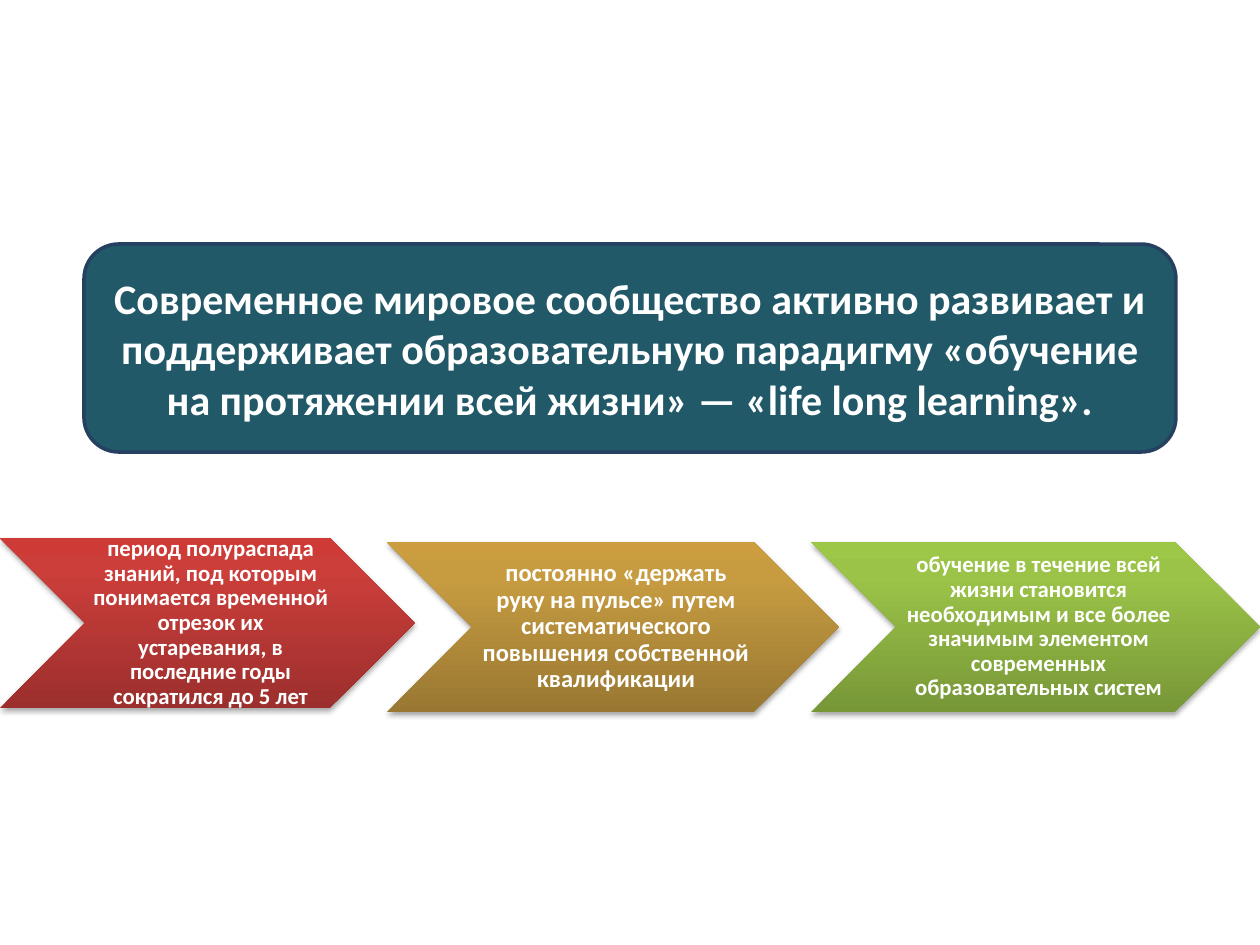
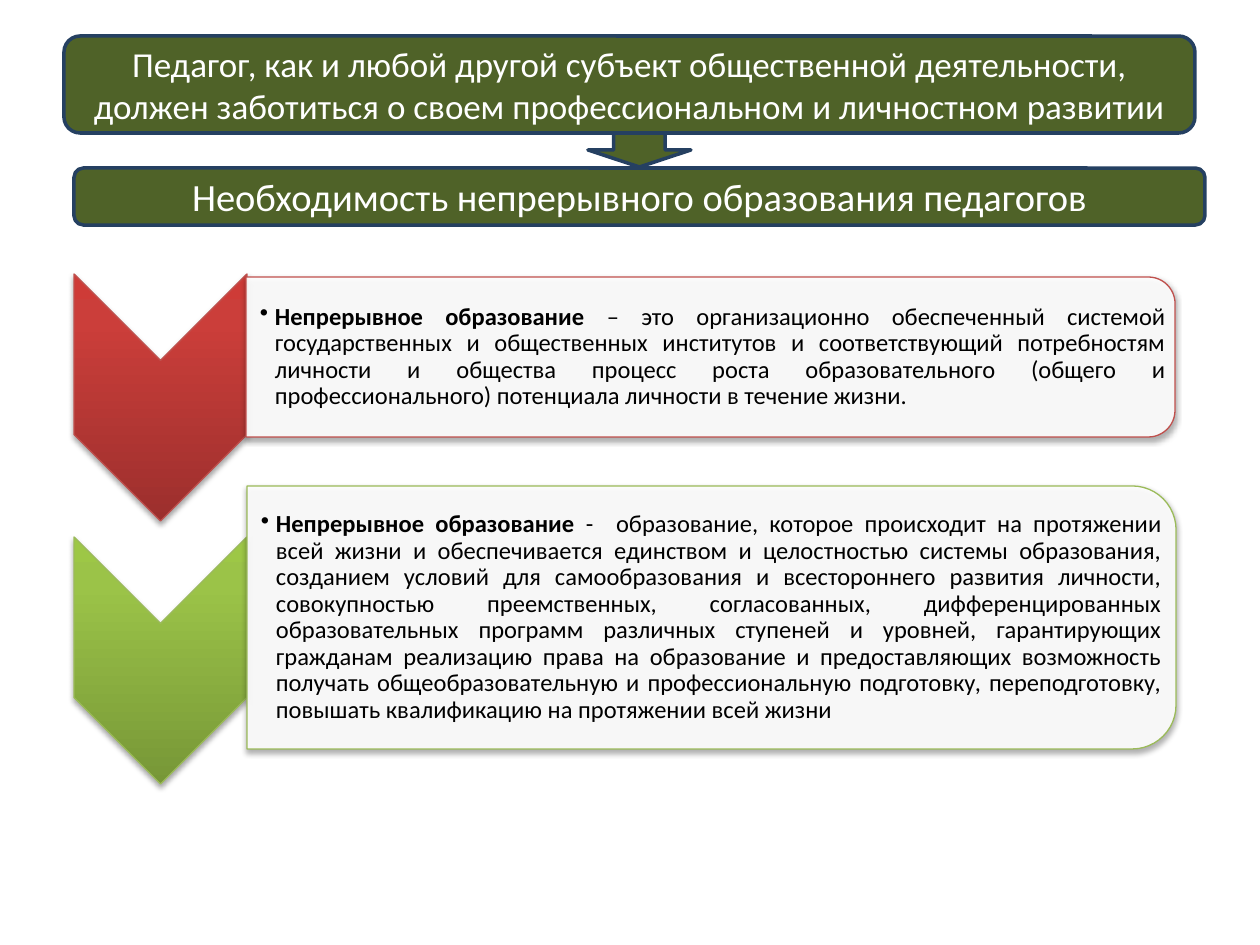
import copy

import pptx
import pptx.dml.color
import pptx.enum.shapes
import pptx.enum.text
import pptx.oxml
import pptx.oxml.ns
import pptx.util

SHAPE = pptx.enum.shapes.MSO_SHAPE
ALIGN = pptx.enum.text.PP_ALIGN
MIDDLE = pptx.enum.text.MSO_ANCHOR.MIDDLE
NAMESPACE = pptx.oxml.ns.nsdecls("a")
qn = pptx.oxml.ns.qn

PIXELS_PER_INCH = 126
FONT = "Calibri"
COLOURS = {
    "white": "FFFFFF",
    "black": "000000",
    "teal": "215968",
    "olive": "4F6228",
    "navy": "254061",
    "red": "C0504D",
    "green": "9BBB59",
}
GRADIENTS = {
    "red": ("9C2F2D", "CB3E3A", "CE3B37"),
    "gold": ("997832", "C79C41", "CB9D3F"),
    "green": ("779737", "9BC348", "9DC746"),
}
STOP_POSITIONS = (0, 0.8, 1)


def emu(pixels):
    return pptx.util.Emu(round(pixels * 914400 / PIXELS_PER_INCH))


def rgb(value):
    return pptx.dml.color.RGBColor.from_string(value)


class SlideBuilder:
    def __init__(self, deck):
        self.deck = deck
        self.page = None

    def new_page(self):
        self.page = self.deck.slides.add_slide(self.deck.slide_layouts[6])

    def shape(self, kind, x, y, width, height, line=None, line_width=2, turned=False):
        if turned:
            x, y = x + (width - height) / 2, y + (height - width) / 2
            width, height = height, width
        box = self.page.shapes.add_shape(kind, emu(x), emu(y), emu(width), emu(height))
        box.rotation = 90 if turned else 0
        if line:
            box.line.color.rgb = rgb(COLOURS[line])
            box.line.width = pptx.util.Pt(line_width)
        else:
            box.line.fill.background()
        box.shadow.inherit = False
        return box

    def solid(self, kind, x, y, width, height, colour):
        box = self.shape(kind, x, y, width, height, "navy")
        box.fill.solid()
        box.fill.fore_color.rgb = rgb(COLOURS[colour])
        return box

    def banner(self, x, y, width, height, colour, text, size, bold=False):
        box = self.solid(SHAPE.ROUNDED_RECTANGLE, x, y, width, height, colour)
        self.set_text(box.text_frame, [(text, bold)], size, "white", ALIGN.CENTER)

    def chevron(self, x, y, width, height, gradient, line=None, turned=False):
        box = self.shape(SHAPE.CHEVRON, x, y, width, height, line, 0.75, turned)
        box.fill.gradient()
        box.fill.gradient_angle = 90
        gradient_element = box._element.spPr.find(qn("a:gradFill"))
        gradient_element.set("rotWithShape", "0")
        stop_list = gradient_element.find(qn("a:gsLst"))
        stop_list.append(copy.deepcopy(stop_list[-1]))
        stops = zip(box.fill.gradient_stops, STOP_POSITIONS, GRADIENTS[gradient])
        for stop, position, value in stops:
            stop.position = position
            stop.color.rgb = rgb(value)
        self.cast_shadow(box)

    def panel(self, x, y, width, height, line):
        box = self.shape(SHAPE.ROUND_2_SAME_RECTANGLE, x, y, width, height, line, 0.75, True)
        box.fill.solid()
        box.fill.fore_color.rgb = rgb(COLOURS["white"])
        colour = box._element.spPr.find(qn("a:solidFill"))[0]
        colour.append(pptx.oxml.parse_xml(f'<a:alpha {NAMESPACE} val="90000"/>'))
        self.cast_shadow(box)

    def cast_shadow(self, box):
        box._element.spPr.find(qn("a:effectLst")).append(pptx.oxml.parse_xml(
            f'<a:outerShdw {NAMESPACE} blurRad="40000" dist="23000" dir="5400000" '
            'rotWithShape="0"><a:srgbClr val="000000"><a:alpha val="35000"/>'
            '</a:srgbClr></a:outerShdw>'))

    def text(self, x, y, width, height, runs, size, colour, align, insets, bullet_indent=0):
        box = self.page.shapes.add_textbox(emu(x), emu(y), emu(width), emu(height))
        frame = box.text_frame
        left, other = insets
        frame.margin_left = emu(left)
        frame.margin_top = frame.margin_right = frame.margin_bottom = emu(other)
        para = frame.paragraphs[0]
        para.line_spacing = 0.9
        if bullet_indent:
            properties = para._p.get_or_add_pPr()
            properties.set("marL", str(emu(bullet_indent)))
            properties.set("indent", str(-emu(bullet_indent)))
            properties.append(pptx.oxml.parse_xml(f'<a:buChar {NAMESPACE} char="•"/>'))
        self.set_text(frame, runs, size, colour, align)

    def set_text(self, frame, runs, size, colour, align):
        frame.word_wrap = True
        frame.vertical_anchor = MIDDLE
        para = frame.paragraphs[0]
        para.alignment = align
        para.font.name = FONT
        para.font.size = pptx.util.Pt(size)
        para.font.color.rgb = rgb(COLOURS[colour])
        if len(runs) == 1:
            para.font.bold = runs[0][1]
        for text, bold in runs:
            span = para.add_run()
            span.text = text
            if len(runs) > 1:
                span.font.bold = bold


def build_paradigm_page(builder):
    builder.new_page()
    builder.banner(
        84, 244, 1092, 208, "teal",
        "Современное мировое сообщество активно развивает и поддерживает образовательную "
        "парадигму «обучение на протяжении всей жизни» — «life long learning».",
        24, True)
    height = 170
    steps = [
        (0, 538, 415, "red", 13,
         "период полураспада знаний, под которым понимается временной отрезок их "
         "устаревания, в последние годы сократился до 5 лет"),
        (387, 542, 452, "gold", 14,
         "постоянно «держать руку на пульсе» путем систематического повышения "
         "собственной квалификации"),
        (811, 542, 449, "green", 13,
         "обучение в течение всей жизни становится необходимым и все более значимым "
         "элементом современных образовательных систем"),
    ]
    for x, y, width, gradient, size, text in steps:
        builder.chevron(x, y, width, height, gradient)
        builder.text(x + height / 2, y, width - height, height, [(text, True)],
                     size, "white", ALIGN.CENTER, (8, 2))


def build_education_page(builder):
    builder.new_page()
    builder.banner(
        64, 36, 1131, 97, "olive",
        "Педагог, как и любой другой субъект общественной деятельности, должен "
        "заботиться о своем профессиональном и личностном развитии", 20)
    builder.banner(74, 168, 1131, 57, "olive",
                   "Необходимость непрерывного образования педагогов", 22)
    builder.solid(SHAPE.DOWN_ARROW, 588, 133, 103, 34, "olive")
    definitions = [
        ("red", 274, 246, 277, 160,
         "– это организационно обеспеченный системой государственных и общественных "
         "институтов и соответствующий потребностям личности и общества процесс роста "
         "образовательного (общего и профессионального) потенциала личности в течение жизни."),
        ("green", 537, 247, 486, 263,
         "-  образование, которое происходит на протяжении всей жизни и обеспечивается "
         "единством и целостностью системы образования, созданием условий для "
         "самообразования и всестороннего развития личности, совокупностью преемственных, "
         "согласованных, дифференцированных образовательных программ различных ступеней и "
         "уровней, гарантирующих гражданам реализацию права на образование и "
         "предоставляющих возможность получать общеобразовательную и профессиональную "
         "подготовку, переподготовку, повышать квалификацию на протяжении всей жизни"),
    ]
    panel_width = 929
    for colour, chevron_y, x, y, height, text in definitions:
        builder.chevron(74, chevron_y, 173, 247, colour, colour, True)
        builder.panel(x, y, panel_width, height, colour)
        corner_inset = round(height * 0.05)
        builder.text(x, y + corner_inset, panel_width - corner_inset,
                     height - 2 * corner_inset,
                     [("Непрерывное образование ", True), (text, False)],
                     14, "black", ALIGN.JUSTIFY, (14, 1), 15)


def main():
    deck = pptx.Presentation()
    deck.slide_width = emu(1260)
    deck.slide_height = emu(945)
    builder = SlideBuilder(deck)
    build_paradigm_page(builder)
    build_education_page(builder)
    deck.save("out.pptx")


if __name__ == "__main__":
    main()
